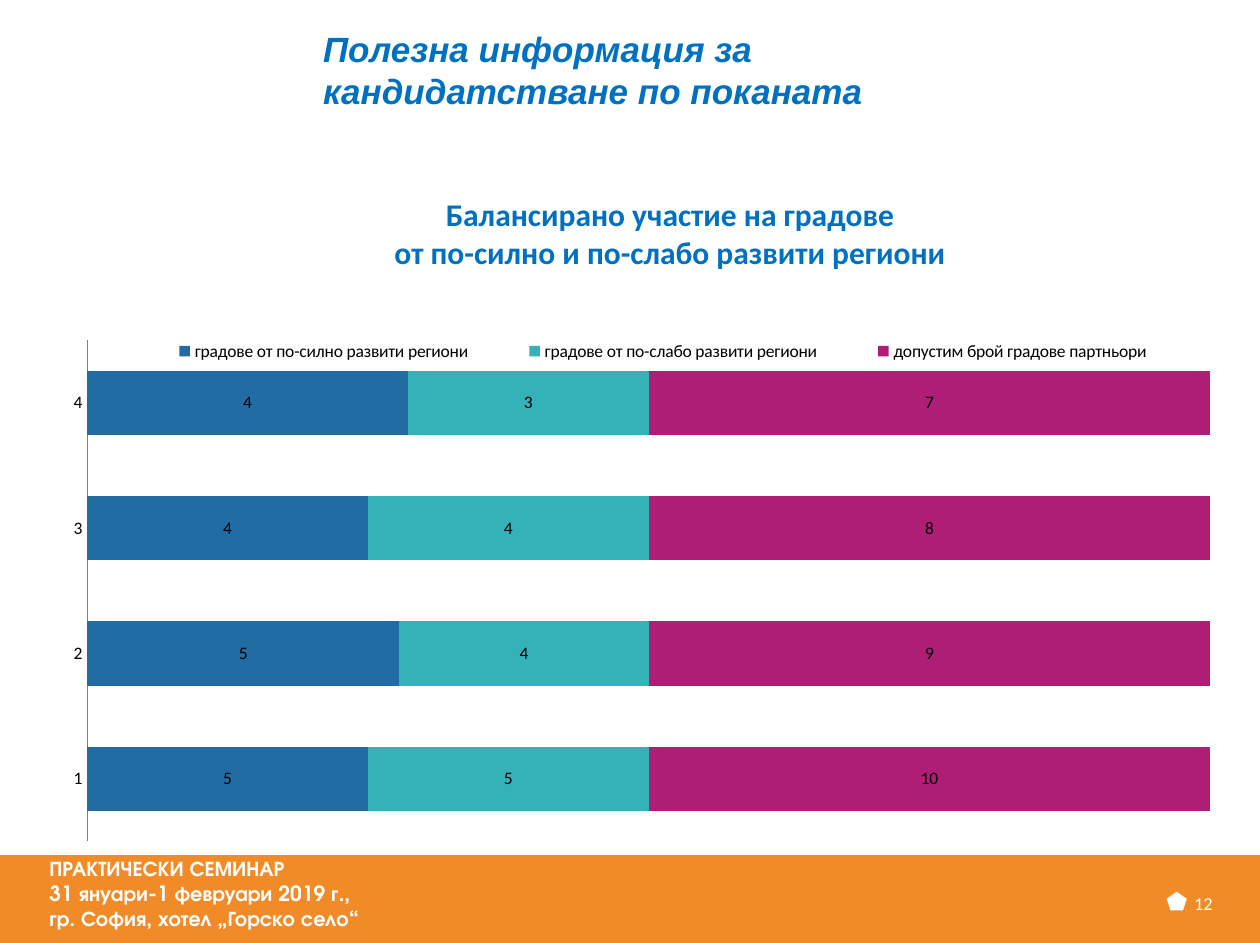
from lxml import etree
from pptx import Presentation
from pptx.chart.data import CategoryChartData
from pptx.dml.color import RGBColor
from pptx.enum import chart as charts, shapes, text
from pptx.oxml.ns import qn
from pptx.util import Pt

WHITE = RGBColor(0xFF, 0xFF, 0xFF)
BLACK = RGBColor(0, 0, 0)
GRAY = RGBColor(0x80, 0x80, 0x80)
BLUE = RGBColor(0x00, 0x70, 0xC0)
ORANGE = RGBColor(0xF0, 0x8B, 0x27)
NAVY = RGBColor(0x21, 0x6C, 0xA2)
TEAL = RGBColor(0x35, 0xB2, 0xB8)
MAGENTA = RGBColor(0xAE, 0x1E, 0x75)

HEADING = ["Полезна информация за кандидатстване по поканата"]
FOOTER = ["ПРАКТИЧЕСКИ СЕМИНАР", "31 януари-1 февруари 2019 г.,", "гр. София, хотел „Горско село“"]
PAGE_NUMBER = ["12"]
CHART_TITLE = ["Балансирано участие на градове", "от по-силно и по-слабо развити региони"]
CATEGORIES = ["1", "2", "3", "4"]
SERIES = [
    ("градове от по-силно развити региони", [5, 5, 4, 4], NAVY),
    ("градове от по-слабо развити региони", [5, 4, 4, 3], TEAL),
    ("допустим брой градове партньори", [10, 9, 8, 7], MAGENTA),
]
BARS = [
    (shapes.MSO_SHAPE.RECTANGLE, (0, 488.4, 722.9, 50.2), ORANGE),
    (shapes.MSO_SHAPE.REGULAR_PENTAGON, (666.7, 509.3, 11.5, 10.8), WHITE),
]
CHART_BOX = (28.2, 102.2, 677, 386)
PLOT_BOX = (21.6, 92.2, 641.7, 286.3)
LEGEND_BOX = (42.6, 88.8, 616, 19.3)
TITLE_CORNER = (195, 6.4)


def set_font(font, size, color, name="Calibri", bold=False, italic=False):
    font.size, font.name, font.bold, font.italic = Pt(size), name, bold, italic
    font.color.rgb = color


def fill_text(frame, lines, align=None, **style):
    for index, line in enumerate(lines):
        paragraph = frame.paragraphs[0] if index == 0 else frame.add_paragraph()
        paragraph.alignment = align
        run = paragraph.add_run()
        run.text = line
        set_font(run.font, **style)


def add_text(slide, lines, box, inset=True, anchor=text.MSO_ANCHOR.TOP, **style):
    frame = slide.shapes.add_textbox(*map(Pt, box)).text_frame
    frame.word_wrap = True
    frame.vertical_anchor = anchor
    if not inset:
        frame.margin_left = frame.margin_right = frame.margin_top = frame.margin_bottom = 0
    fill_text(frame, lines, **style)


def place(chart, part, index, box, inner=False):
    parent = chart.element.find(".//" + qn(f"c:{part}"))
    for old in parent.findall(qn("c:layout")):
        parent.remove(old)
    layout = etree.Element(qn("c:layout"))
    manual = etree.SubElement(layout, qn("c:manualLayout"))
    settings = [("layoutTarget", "inner")] if inner else []
    settings += [("xMode", "edge"), ("yMode", "edge")]
    settings += [(name, length / whole) for name, length, whole in zip("xywh", box, CHART_BOX[2:] * 2)]
    for name, value in settings:
        etree.SubElement(manual, qn(f"c:{name}")).set("val", str(value))
    parent.insert(index, layout)


def add_city_chart(slide):
    data = CategoryChartData()
    data.categories = CATEGORIES
    for name, values, _ in SERIES:
        data.add_series(name, values)
    chart = slide.shapes.add_chart(
        charts.XL_CHART_TYPE.BAR_STACKED_100, *map(Pt, CHART_BOX), data
    ).chart
    set_font(chart.font, 10, BLACK)

    fill_text(chart.chart_title.text_frame, CHART_TITLE, align=text.PP_ALIGN.CENTER,
              size=18, color=BLUE, bold=True)
    chart.has_legend = True
    legend = chart.legend
    legend.position = charts.XL_LEGEND_POSITION.TOP
    legend.include_in_layout = True
    set_font(legend.font, 10, BLACK)

    plot = chart.plots[0]
    plot.gap_width, plot.overlap, plot.vary_by_categories = 95, 100, False
    for series, (_, _, color) in zip(plot.series, SERIES):
        series.format.fill.solid()
        series.format.fill.fore_color.rgb = color
        labels = series.data_labels
        labels.show_value = True
        set_font(labels.font, 10, BLACK)

    chart.value_axis.visible = False
    chart.value_axis.has_major_gridlines = False
    axis = chart.category_axis
    axis.major_tick_mark = axis.minor_tick_mark = charts.XL_TICK_MARK.NONE
    axis.format.line.color.rgb = GRAY
    axis.format.line.width = Pt(0.75)
    set_font(axis.tick_labels.font, 10, BLACK)

    place(chart, "plotArea", 0, PLOT_BOX, inner=True)
    place(chart, "title", 1, TITLE_CORNER)
    place(chart, "legend", 1, LEGEND_BOX)


def main():
    presentation = Presentation()
    presentation.slide_width, presentation.slide_height = Pt(720), Pt(538.63)
    slide = presentation.slides.add_slide(presentation.slide_layouts[6])
    for kind, box, color in BARS:
        shape = slide.shapes.add_shape(kind, *map(Pt, box))
        shape.shadow.inherit = False
        shape.fill.solid()
        shape.fill.fore_color.rgb = color
        shape.line.fill.background()
    add_text(slide, FOOTER, (28.3, 488.4, 355, 50.2), inset=False,
             size=12, color=WHITE, name="TeX Gyre Adventor", bold=True)
    add_text(slide, PAGE_NUMBER, (682.4, 501.4, 28.8, 28.8), inset=False,
             anchor=text.MSO_ANCHOR.MIDDLE, size=10.5, color=WHITE)
    add_text(slide, HEADING, (177.5, 12.2, 428.4, 55.4),
             size=20, color=BLUE, name="Arial", bold=True, italic=True)
    add_city_chart(slide)
    presentation.save("out.pptx")


if __name__ == "__main__":
    main()
